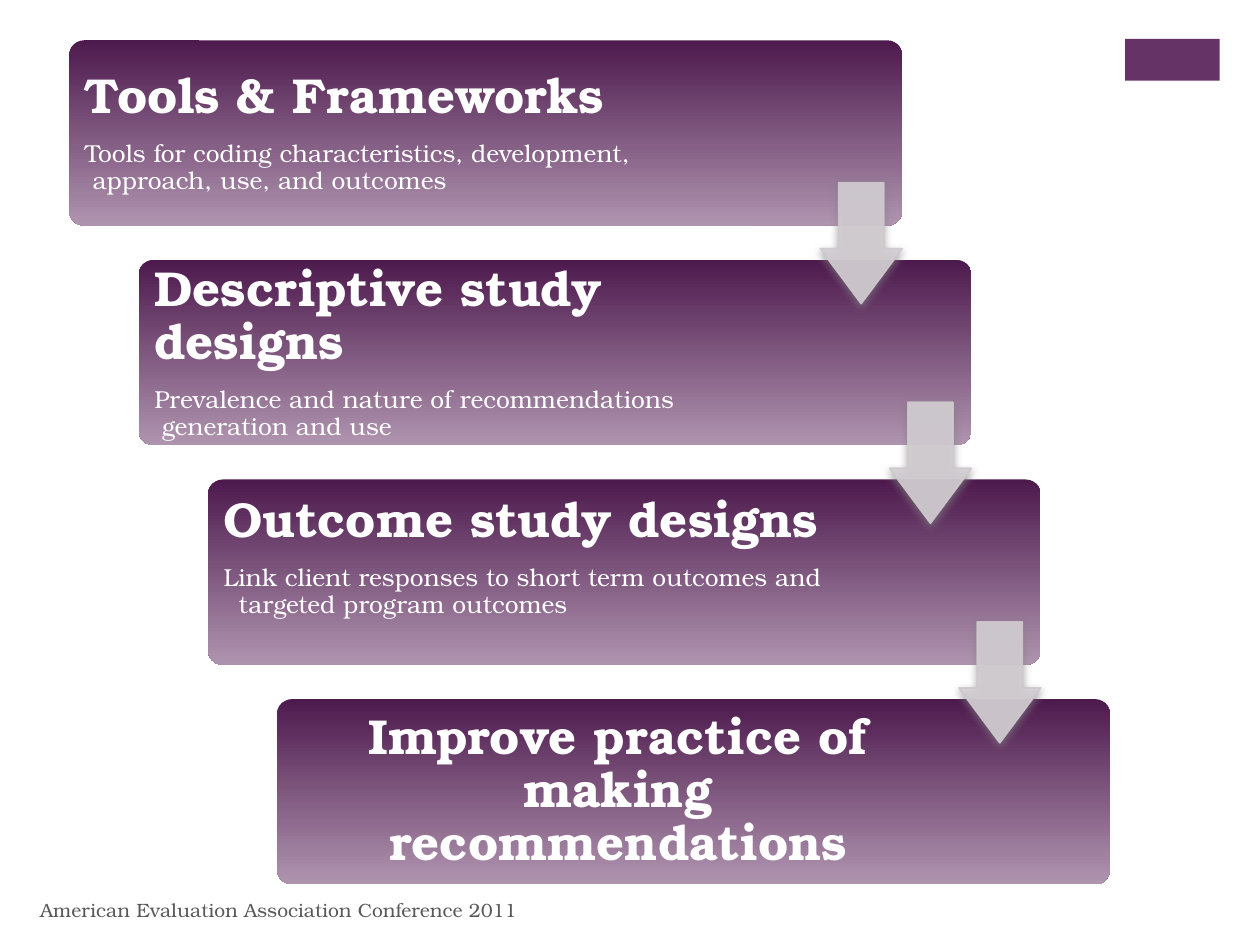
from dataclasses import dataclass

from lxml.etree import SubElement
from pptx import Presentation
from pptx.dml.color import RGBColor
from pptx.enum.shapes import MSO_SHAPE as Preset
from pptx.enum.text import MSO_ANCHOR as Anchor, PP_ALIGN as Align
from pptx.oxml.ns import qn
from pptx.util import Inches, Pt


@dataclass(frozen=True)
class Theme:
    font: str = "TeX Gyre Bonum"
    accent: str = "663366"
    gradient: tuple = ("4D1A4D", "AF94AF")
    light: str = "FFFFFF"
    footer: str = "595959"
    arrow: str = "D3CED3"
    arrow_line: str = "CEC9CE"
    shadow: str = "808080"
    heading_size: int = 28
    detail_size: int = 14
    footer_size: int = 11


@dataclass(frozen=True)
class Step:
    heading: str
    detail: str = ""
    hanging: float = 0.06
    right_inset: float = 1.29
    bottom_inset: float = 0.09


THEME = Theme()
LEFT, TOP = 0.55, 0.32
STEP_X, STEP_Y = 0.55, 1.743
BOX_WIDTH, BOX_HEIGHT = 6.61, 1.47
ARROW_WIDTH, ARROW_HEIGHT = 0.65, 0.96
ARROW_DROP = 1.13

STEPS = [
    Step(
        "Tools & Frameworks",
        "Tools for coding characteristics, development, approach, use, and outcomes",
        right_inset=1.19,
    ),
    Step(
        "Descriptive study designs",
        "Prevalence and nature of recommendations generation and use",
    ),
    Step(
        "Outcome study designs",
        "Link client responses to short term outcomes and targeted program outcomes",
        hanging=0.12,
        bottom_inset=0.33,
    ),
    Step("Improve practice of making recommendations"),
]


def color(value: str) -> RGBColor:
    return RGBColor.from_string(value)


def write(para, text: str, *, size: int, ink: str, bold: bool = False,
          align=Align.LEFT, spacing: float = 1.0, after: float = 0,
          hanging: float = 0) -> None:
    para.alignment = align
    para.line_spacing = spacing
    para.space_after = Pt(after)
    if hanging:
        properties = para._p.get_or_add_pPr()
        properties.set("marL", str(Inches(hanging)))
        properties.set("indent", str(-Inches(hanging)))
    span = para.add_run()
    span.text = text
    span.font.name = THEME.font
    span.font.size = Pt(size)
    span.font.bold = bold
    span.font.color.rgb = color(ink)


def add_plain(page, preset, left: float, top: float, width: float, height: float):
    shape = page.shapes.add_shape(
        preset, Inches(left), Inches(top), Inches(width), Inches(height)
    )
    shape.shadow.inherit = False
    shape.line.fill.background()
    return shape


def add_accent(page) -> None:
    accent = add_plain(page, Preset.RECTANGLE, 8.93, 0.31, 0.75, 0.33)
    accent.fill.solid()
    accent.fill.fore_color.rgb = color(THEME.accent)


def add_step(page, step: Step, left: float, top: float) -> None:
    box = add_plain(page, Preset.ROUNDED_RECTANGLE, left, top, BOX_WIDTH, BOX_HEIGHT)
    box.adjustments[0] = 0.08
    box.fill.gradient()
    box.fill.gradient_angle = 270
    for stop, value in zip(box.fill.gradient_stops, THEME.gradient):
        stop.color.rgb = color(value)

    frame = box.text_frame
    frame.word_wrap = True
    frame.vertical_anchor = Anchor.MIDDLE
    frame.margin_left = frame.margin_top = Inches(0.09)
    frame.margin_right = Inches(step.right_inset)
    frame.margin_bottom = Inches(step.bottom_inset)
    write(frame.paragraphs[0], step.heading, size=THEME.heading_size,
          ink=THEME.light, bold=True, spacing=0.9, after=10,
          align=Align.LEFT if step.detail else Align.CENTER)
    if step.detail:
        write(frame.add_paragraph(), step.detail, size=THEME.detail_size,
              ink=THEME.light, spacing=0.9, after=2, hanging=step.hanging)


def set_alpha(parent, percent: int) -> None:
    for tint in parent.iter(qn("a:srgbClr")):
        SubElement(tint, qn("a:alpha"), val=str(percent * 1000))


def add_arrow(page, left: float, top: float) -> None:
    arrow = add_plain(page, Preset.DOWN_ARROW, left, top, ARROW_WIDTH, ARROW_HEIGHT)
    arrow.adjustments[0] = 0.55
    arrow.adjustments[1] = 0.67
    arrow.fill.solid()
    arrow.fill.fore_color.rgb = color(THEME.arrow)
    arrow.line.color.rgb = color(THEME.arrow_line)
    arrow.line.width = Pt(1)
    properties = arrow._element.spPr
    set_alpha(properties, 90)
    shadow = SubElement(
        properties.find(qn("a:effectLst")), qn("a:outerShdw"),
        blurRad=str(Pt(5)), dist=str(Pt(2)), dir="5400000", rotWithShape="0",
    )
    SubElement(shadow, qn("a:srgbClr"), val=THEME.shadow)
    set_alpha(shadow, 75)


def add_footer(page) -> None:
    box = page.shapes.add_textbox(Inches(0.22), Inches(7.02), Inches(6.7), Inches(0.4))
    frame = box.text_frame
    frame.word_wrap = True
    frame.vertical_anchor = Anchor.MIDDLE
    write(frame.paragraphs[0], "American Evaluation Association Conference 2011",
          size=THEME.footer_size, ink=THEME.footer)


def main() -> None:
    deck = Presentation()
    deck.slide_width, deck.slide_height = Inches(10), Inches(7.5)
    page = deck.slides.add_slide(deck.slide_layouts[6])
    add_accent(page)
    corners = [(LEFT + i * STEP_X, TOP + i * STEP_Y) for i in range(len(STEPS))]
    for step, (left, top) in zip(STEPS, corners):
        add_step(page, step, left, top)
    for left, top in corners[:-1]:
        add_arrow(page, left + BOX_WIDTH - ARROW_WIDTH, top + ARROW_DROP)
    add_footer(page)
    deck.save("out.pptx")


if __name__ == "__main__":
    main()
